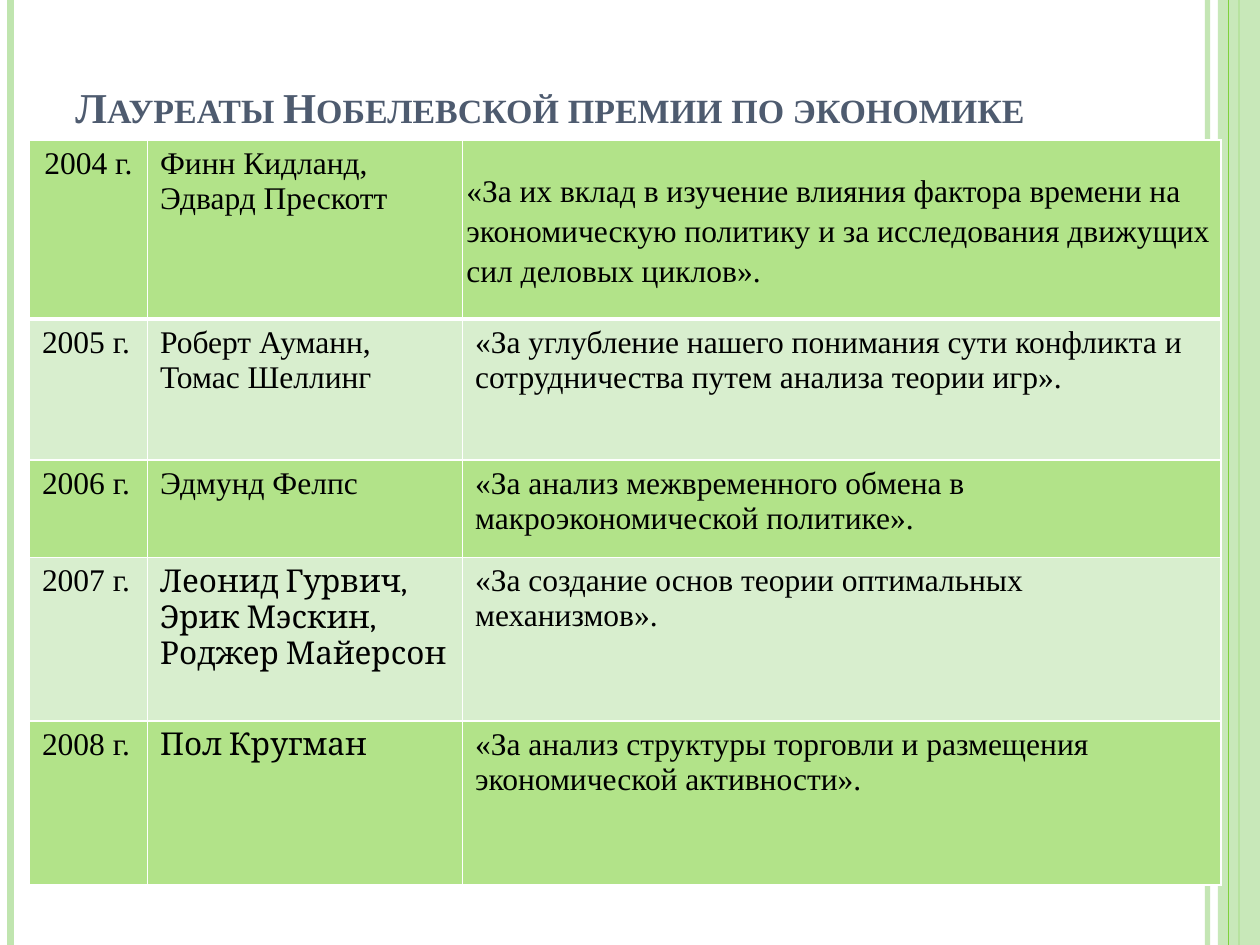
from dataclasses import dataclass

from lxml.etree import SubElement
from pptx import Presentation
from pptx.dml.color import RGBColor
from pptx.enum.shapes import MSO_CONNECTOR, MSO_SHAPE
from pptx.enum.text import MSO_ANCHOR, PP_ALIGN
from pptx.oxml.ns import qn
from pptx.util import Pt


@dataclass(frozen=True)
class Theme:
    """Colours, fonts and type sizes of the slide."""
    title: RGBColor = RGBColor.from_string("4E5B6F")
    text: RGBColor = RGBColor.from_string("000000")
    border: str = "FFFFFF"
    pale: RGBColor = RGBColor.from_string("C0E5AF")
    green: RGBColor = RGBColor.from_string("7FD13B")
    bands: tuple = (RGBColor.from_string("B2E389"), RGBColor.from_string("D8EECE"))
    font: str = "Times New Roman"
    alt_font: str = "Cambria"
    title_size: float = 24.3
    body_size: float = 18


THEME = Theme()
COLUMNS = (67.5, 180, 433.5)
ROWS = (102.2, 80.8, 55.6, 93.6, 93.6)
LAUREATES = (
    ("2004 г.", ("Финн Кидланд,", "Эдвард Прескотт"),
     "«За их вклад в изучение влияния фактора времени на экономическую политику "
     "и за исследования движущих сил деловых циклов».", THEME.font),
    ("2005 г.", ("Роберт Ауманн,", "Томас Шеллинг"),
     "«За углубление нашего понимания сути конфликта и сотрудничества "
     "путем анализа теории игр».", THEME.font),
    ("2006 г.", ("Эдмунд Фелпс",),
     "«За анализ межвременного обмена в макроэкономической политике».", THEME.font),
    ("2007 г.", ("Леонид Гурвич,", "Эрик Мэскин,", "Роджер Майерсон"),
     "«За создание основ теории оптимальных механизмов».", THEME.alt_font),
    ("2008 г.", ("Пол Кругман",),
     "«За анализ структуры торговли и размещения экономической активности».",
     THEME.alt_font),
)


def set_alpha(sp, percent):
    """Make the first colour of a shape partly transparent."""
    color = next(sp._element.spPr.iter(qn("a:srgbClr")))
    SubElement(color, qn("a:alpha")).set("val", str(percent * 1000))


def add_stripe(s, x, top, height, color, width, alpha=100):
    """Draw one vertical line."""
    sp = s.shapes.add_connector(
        MSO_CONNECTOR.STRAIGHT, Pt(x), Pt(top), Pt(x), Pt(top + height))
    sp.line.color.rgb = color
    sp.line.width = Pt(width)
    SubElement(sp._element.spPr, qn("a:effectLst"))
    if alpha < 100:
        set_alpha(sp, alpha)


def add_frame(s, left, top, width, height):
    """Draw the green stripes along both sides of the box."""
    right = left + width
    add_stripe(s, right - 30, top, height, THEME.pale, 3, 93)
    add_stripe(s, left + 6, top, height, THEME.pale, 4.5)
    add_stripe(s, right - 12, top, height, THEME.green, 1.5)
    sp = s.shapes.add_shape(
        MSO_SHAPE.RECTANGLE, Pt(right - 24), Pt(top), Pt(24), Pt(height))
    sp.shadow.inherit = False
    sp.fill.solid()
    sp.fill.fore_color.rgb = THEME.pale
    sp.line.fill.background()
    set_alpha(sp, 87)
    add_stripe(s, right - 18, top, height, THEME.green, 0.75)


def add_title(s, left, top, width, height):
    """Place the small-caps heading above the table."""
    tf = s.shapes.add_textbox(Pt(left), Pt(top), Pt(width), Pt(height)).text_frame
    tf.word_wrap = True
    tf.vertical_anchor = MSO_ANCHOR.BOTTOM
    tf.margin_bottom = Pt(36)
    p = tf.paragraphs[0]
    r = p.add_run()
    r.text = "Лауреаты Нобелевской премии по экономике"
    r.font.size = Pt(THEME.title_size)
    r.font.name = THEME.font
    r.font.bold = True
    r.font.color.rgb = THEME.title
    r.font._element.set("cap", "small")


def set_borders(cell, top, bottom):
    """Give a cell white borders with the given top and bottom widths."""
    tc_pr = cell._tc.get_or_add_tcPr()
    for side, width in (("L", 1), ("R", 1), ("T", top), ("B", bottom)):
        ln = SubElement(tc_pr, qn(f"a:ln{side}"), w=str(Pt(width)))
        fill = SubElement(ln, qn("a:solidFill"))
        SubElement(fill, qn("a:srgbClr"), val=THEME.border)


def fill_cell(cell, lines, font, color):
    """Write the lines of one cell on its band colour."""
    cell.fill.solid()
    cell.fill.fore_color.rgb = color
    cell.text = "\n".join(lines)
    for p in cell.text_frame.paragraphs:
        p.font.name = font
        p.font.size = Pt(THEME.body_size)
        p.font.color.rgb = THEME.text


def add_laureates(s, left, top, width, height):
    """Build the table of years, laureates and citations."""
    table = s.shapes.add_table(
        len(ROWS), len(COLUMNS), Pt(left), Pt(top), Pt(width), Pt(height)).table
    table.first_row = False
    table.horz_banding = False
    for column, size in zip(table.columns, COLUMNS):
        column.width = Pt(width * size / sum(COLUMNS))
    for row, size in zip(table.rows, ROWS):
        row.height = Pt(height * size / sum(ROWS))
    for i, (year, names, citation, name_font) in enumerate(LAUREATES):
        contents = (((year,), THEME.font), (names, name_font), ((citation,), THEME.font))
        for j, (lines, font) in enumerate(contents):
            cell = table.cell(i, j)
            set_borders(cell, 3 if i == 1 else 1, 3 if i == 0 else 1)
            fill_cell(cell, lines, font, THEME.bands[i % 2])
    table.cell(0, 0).text_frame.paragraphs[0].alignment = PP_ALIGN.CENTER
    cell = table.cell(0, 2)
    cell.vertical_anchor = MSO_ANCHOR.MIDDLE
    cell.margin_left = cell.margin_right = Pt(2.2)
    cell.margin_top = cell.margin_bottom = Pt(0.7)
    cell.text_frame.paragraphs[0].line_spacing = 1.15


def main():
    """Build and save the slide."""
    prs = Presentation()
    prs.slide_width, prs.slide_height = Pt(720), Pt(540)
    s = prs.slides.add_slide(prs.slide_layouts[6])
    add_frame(s, 0, 0, 720, 540)
    add_title(s, 36, 21.6, 588, 90)
    add_laureates(s, 16.8, 80, sum(COLUMNS), sum(ROWS))
    prs.save("out.pptx")


if __name__ == "__main__":
    main()
